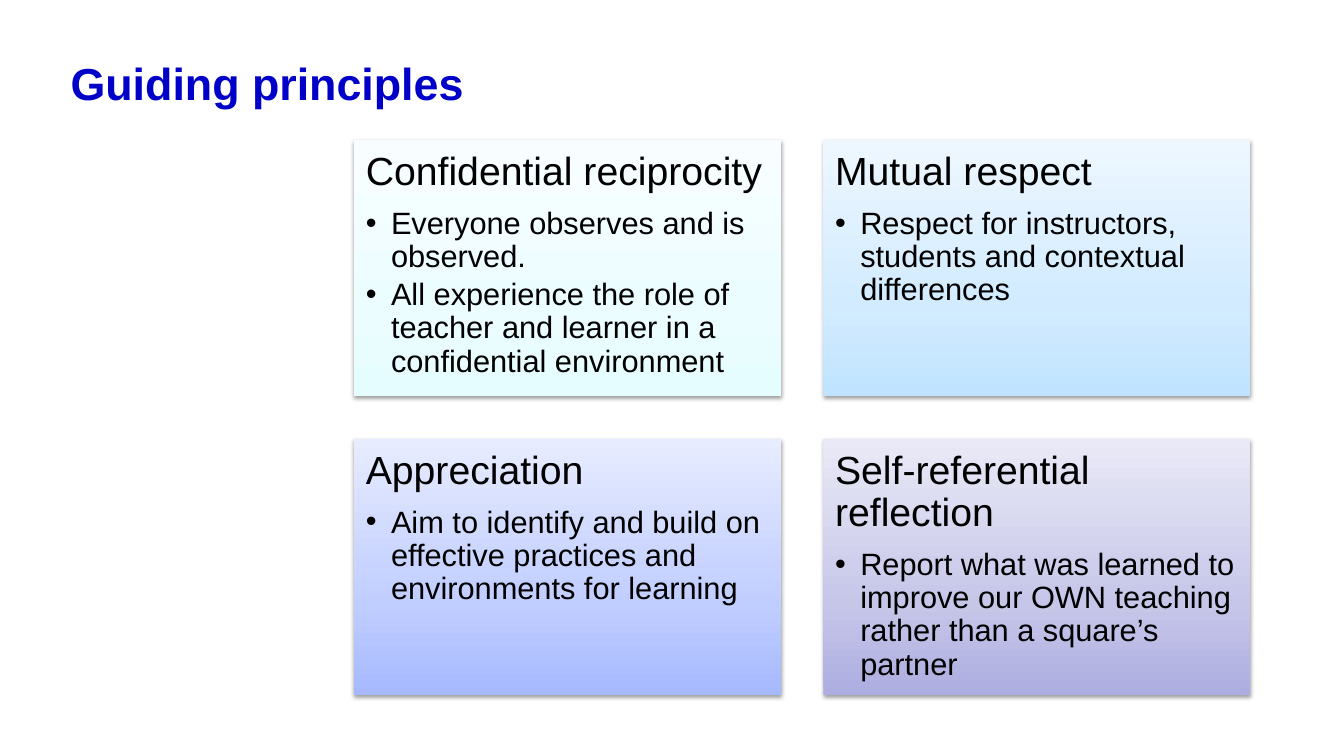
from dataclasses import dataclass

from lxml import etree
from pptx import Presentation
from pptx.dml.color import RGBColor
from pptx.enum.shapes import MSO_SHAPE
from pptx.enum.text import MSO_ANCHOR, PP_ALIGN
from pptx.oxml.ns import qn
from pptx.slide import Slide
from pptx.text.text import _Paragraph
from pptx.util import Pt

RECTANGLE = MSO_SHAPE.RECTANGLE
LEFT = PP_ALIGN.LEFT
TOP, MIDDLE = MSO_ANCHOR.TOP, MSO_ANCHOR.MIDDLE

FONT = "Arial"
GRID_LEFT, GRID_TOP = 252.9, 100
CARD_WIDTH, CARD_HEIGHT = 304.8, 182.9
CARD_GAP = 30.4
COLUMNS = 2
CARD_INSET = 8.4
BULLET_INDENT = 18
STOP_POSITIONS = (0, 35, 100)


@dataclass
class Principle:
    heading: str
    points: list[str]
    gradient: tuple[str, str, str]


PRINCIPLES = [
    Principle(
        "Confidential reciprocity",
        [
            "Everyone observes and is observed.",
            "All experience the role of teacher and learner in a confidential environment",
        ],
        ("E6FDFF", "ECFDFF", "F8FEFF"),
    ),
    Principle(
        "Mutual respect",
        ["Respect for instructors, students and contextual differences"],
        ("C0E4FF", "D2EBFF", "EDF7FF"),
    ),
    Principle(
        "Appreciation",
        ["Aim to identify and build on effective practices and environments for learning"],
        ("A6B9FF", "C0CDFF", "E7ECFF"),
    ),
    Principle(
        "Self-referential reflection",
        ["Report what was learned to improve our OWN teaching rather than a square’s partner"],
        ("ADADE1", "C6C6E9", "E9E9F7"),
    ),
]


def add_color(parent: etree._Element, color: str) -> etree._Element:
    return etree.SubElement(parent, qn("a:srgbClr"), val=color)


def write(paragraph: _Paragraph, text: str, size: float, color: str, bold: bool = False) -> None:
    paragraph.text = text
    paragraph.alignment = LEFT
    font = paragraph.runs[0].font
    font.name, font.size, font.bold = FONT, Pt(size), bold
    font.color.rgb = RGBColor.from_string(color)


def add_bullet(paragraph: _Paragraph) -> None:
    properties = paragraph._p.get_or_add_pPr()
    properties.set("marL", str(Pt(BULLET_INDENT)))
    properties.set("indent", str(-Pt(BULLET_INDENT)))
    etree.SubElement(properties, qn("a:buFont"), typeface=FONT)
    etree.SubElement(properties, qn("a:buChar"), char="•")


def add_title(slide: Slide, text: str) -> None:
    title = slide.shapes.title
    title.left, title.top, title.width, title.height = Pt(43.2), Pt(33.8), Pt(866.9), Pt(51.1)
    title.text_frame.vertical_anchor = MIDDLE
    write(title.text_frame.paragraphs[0], text, 32, "0000C8", bold=True)


def add_card(slide: Slide, principle: Principle, left: float, top: float) -> None:
    card = slide.shapes.add_shape(
        RECTANGLE, Pt(left), Pt(top), Pt(CARD_WIDTH), Pt(CARD_HEIGHT)
    )
    card.line.fill.background()
    card.fill.gradient()
    card.fill.gradient_angle = 90
    stops = card._element.spPr.find(".//" + qn("a:gsLst"))
    for stop in list(stops):
        stops.remove(stop)
    for position, color in zip(STOP_POSITIONS, principle.gradient):
        add_color(etree.SubElement(stops, qn("a:gs"), pos=str(position * 1000)), color)

    card.shadow.inherit = False
    effects = card._element.spPr.find(qn("a:effectLst"))
    shadow = etree.SubElement(
        effects, qn("a:outerShdw"), blurRad=str(Pt(3.1)), dist=str(Pt(1.6)),
        dir="5400000", rotWithShape="0",
    )
    etree.SubElement(add_color(shadow, "000000"), qn("a:alpha"), val="38000")

    frame = card.text_frame
    frame.word_wrap = True
    frame.vertical_anchor = TOP
    frame.margin_left = frame.margin_right = Pt(CARD_INSET)
    frame.margin_top = frame.margin_bottom = Pt(CARD_INSET)
    heading = frame.paragraphs[0]
    write(heading, principle.heading, 28, "000000")
    heading.line_spacing, heading.space_after = 0.9, Pt(9.8)
    for text in principle.points:
        point = frame.add_paragraph()
        write(point, text, 22, "000000")
        point.level = 1
        point.line_spacing, point.space_after = 0.9, Pt(3.3)
        add_bullet(point)


def main() -> None:
    presentation = Presentation()
    presentation.slide_width, presentation.slide_height = Pt(960), Pt(540)
    title_only = presentation.slide_layouts[5]
    slide = presentation.slides.add_slide(title_only)
    add_title(slide, "Guiding principles")
    for index, principle in enumerate(PRINCIPLES):
        row, column = divmod(index, COLUMNS)
        add_card(
            slide,
            principle,
            GRID_LEFT + column * (CARD_WIDTH + CARD_GAP),
            GRID_TOP + row * (CARD_HEIGHT + CARD_GAP),
        )
    presentation.save("out.pptx")


if __name__ == "__main__":
    main()
